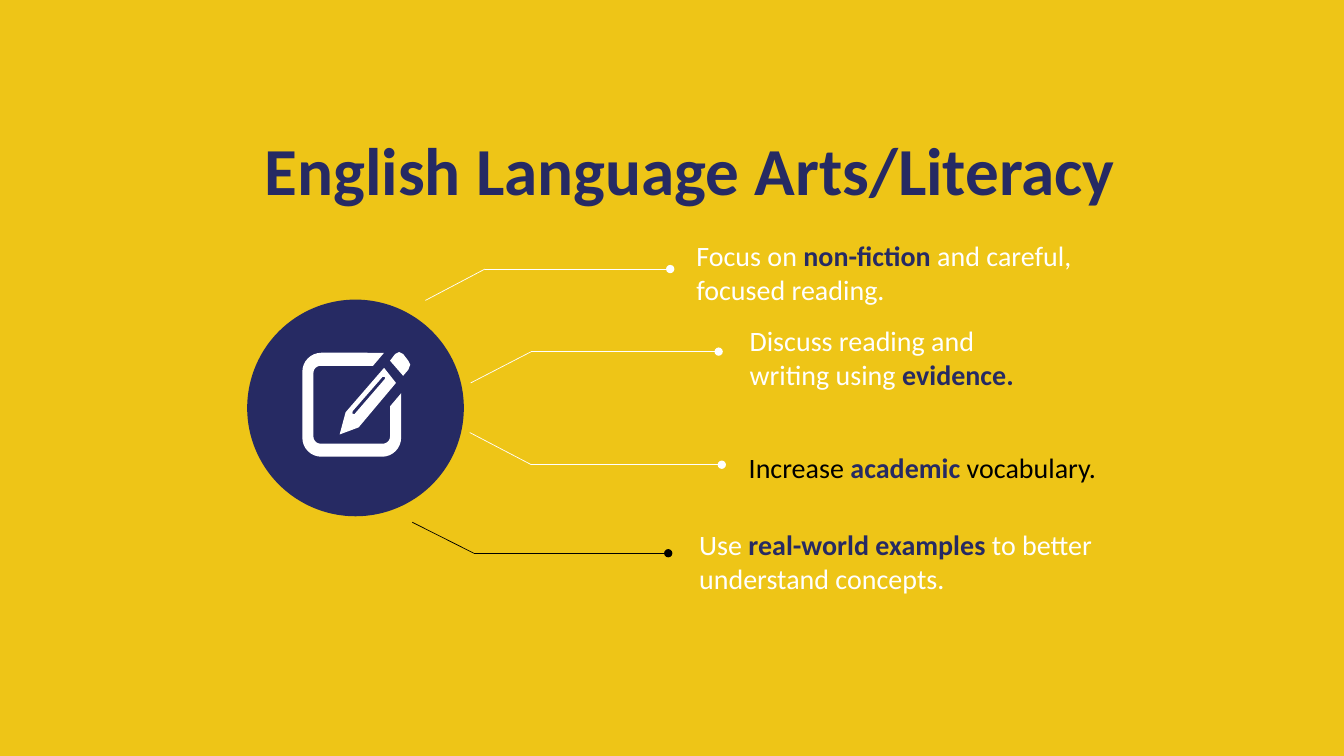
from dataclasses import dataclass
from math import cos, radians, sin

from lxml.etree import SubElement
from pptx import Presentation
from pptx.dml.color import RGBColor
from pptx.enum.shapes import MSO_CONNECTOR, MSO_SHAPE
from pptx.enum.text import MSO_AUTO_SIZE, PP_ALIGN
from pptx.oxml.ns import qn
from pptx.shapes.base import BaseShape
from pptx.slide import Slide
from pptx.text.text import TextFrame
from pptx.util import Cm, Pt

STRAIGHT = MSO_CONNECTOR.STRAIGHT
OVAL = MSO_SHAPE.OVAL
GROW = MSO_AUTO_SIZE.SHAPE_TO_FIT_TEXT
CENTER = PP_ALIGN.CENTER

Point = tuple[float, float]
Box = tuple[float, float, float, float]


@dataclass(frozen=True)
class Theme:
    gold: RGBColor = RGBColor(0xEE, 0xC5, 0x17)
    navy: RGBColor = RGBColor(0x26, 0x2A, 0x63)
    white: RGBColor = RGBColor(0xFF, 0xFF, 0xFF)
    black: RGBColor = RGBColor(0, 0, 0)
    font: str = "Calibri"
    title: Pt = Pt(48)
    body: Pt = Pt(20)
    line: Pt = Pt(0.5)


THEME = Theme()


@dataclass(frozen=True)
class Branch:
    start: Point
    bend: Point
    end: float
    color: RGBColor


@dataclass(frozen=True)
class Note:
    box: Box
    words: tuple[str, ...]  # every second piece is stressed
    color: RGBColor
    wrap: bool = True


# All places are in centimetres
BRANCHES = (
    Branch((10.72, 7.57), (12.22, 6.78), 16.89, THEME.white),
    Branch((11.86, 9.65), (13.39, 8.86), 18.11, THEME.white),
    Branch((11.84, 10.9), (13.39, 11.71), 18.19, THEME.white),
    Branch((10.39, 13.16), (11.94, 13.94), 16.84, THEME.black),
)
NOTES = (
    Note((17.3, 5.89, 11.02, 1.96),
         ("Focus on ", "non-fiction ", "and careful, focused reading."), THEME.white),
    Note((18.64, 8.03, 8.31, 1.96),
         ("Discuss reading and writing using ", "evidence."), THEME.white),
    Note((18.62, 11.23, 9.35, 1.12),
         ("Increase ", "academic ", "vocabulary."), THEME.black, wrap=False),
    Note((17.37, 13.18, 11.28, 1.96),
         ("Use ", "real-world examples ", "to better understand concepts."), THEME.white),
)


def arc(x: float, y: float, radius: float, first: int, sweep: int = 90) -> list[Point]:
    """Points of a quarter turn around (x, y)."""
    turns = [radians(first + sweep * step / 8) for step in range(9)]
    return [(x + radius * cos(turn), y + radius * sin(turn)) for turn in turns]


# Open frame, pencil, slit and rubber of the icon
FRAME = [
    (9.83, 10.24), (10.11, 9.91),
    *arc(9.63, 11.03, 0.48, 0), *arc(8.1, 11.03, 0.48, 90), *arc(8.1, 9.37, 0.48, 180),
    (9.68, 8.89), (9.4, 9.22),
    *arc(8.08, 9.4, 0.18, 270, -90), *arc(8.08, 11, 0.18, 180, -90),
    *arc(9.65, 11, 0.18, 90, -90),
]
PENCIL = [(9.98, 9.65), (9.04, 10.77), (8.56, 10.95), (8.71, 10.39), (9.68, 9.27)]
SLIT = [(9.7, 9.55), (9.7, 9.5), (9.64, 9.5), (8.89, 10.36), (8.88, 10.42), (8.93, 10.44)]
RUBBER = [(10.16, 9.47), (9.83, 9.09), (9.96, 8.92), (10.06, 8.87), (10.16, 8.92),
          (10.29, 9.09), (10.34, 9.19), (10.29, 9.32)]


def paint(shape: BaseShape, color: RGBColor) -> None:
    shape.shadow.inherit = False
    shape.fill.solid()
    shape.fill.fore_color.rgb = color
    shape.line.fill.background()


def add_icon(slide: Slide) -> None:
    disc = slide.shapes.add_shape(OVAL, Cm(6.23), Cm(7.55), Cm(5.46), Cm(5.46))
    paint(disc, THEME.navy)
    frame, *others = [[(Cm(x), Cm(y)) for x, y in loop]
                      for loop in (FRAME, PENCIL, SLIT, RUBBER)]
    pen = slide.shapes.build_freeform(*frame[0])
    pen.add_line_segments(frame[1:])
    for loop in others:
        pen.move_to(*loop[0])
        pen.add_line_segments(loop[1:])
    paint(pen.convert_to_shape(), THEME.white)


def add_branch(slide: Slide, branch: Branch) -> None:
    group = slide.shapes.add_group_shape()
    tip = (branch.end, branch.bend[1])
    for first, last in ((branch.start, branch.bend), (branch.bend, tip)):
        line = group.shapes.add_connector(STRAIGHT, *map(Cm, first + last))
        line.line.color.rgb = branch.color
        line.line.width = THEME.line
        props = line.element.spPr
        if last is tip:
            SubElement(props.find(qn("a:ln")), qn("a:tailEnd"), type="oval")
        SubElement(props, qn("a:effectLst"))


def add_text(slide: Slide, box: Box, words: tuple[str, ...], size: Pt,
             color: RGBColor, wrap: bool) -> TextFrame:
    frame = slide.shapes.add_textbox(*map(Cm, box)).text_frame
    frame.word_wrap = wrap
    frame.auto_size = GROW
    for index, piece in enumerate(words):
        run = frame.paragraphs[0].add_run()
        run.text = piece
        run.font.name = THEME.font
        run.font.size = size
        run.font.bold = index % 2 == 1
        run.font.color.rgb = THEME.navy if run.font.bold else color
    return frame


def main() -> None:
    deck = Presentation()
    deck.slide_width, deck.slide_height = Cm(33.87), Cm(19.05)
    slide = deck.slides.add_slide(deck.slide_layouts[6])
    slide.background.fill.solid()
    slide.background.fill.fore_color.rgb = THEME.gold

    # Icon with its branches
    add_icon(slide)
    for branch in BRANCHES:
        add_branch(slide, branch)

    # Notes at the branch tips
    for note in NOTES:
        add_text(slide, note.box, note.words, THEME.body, note.color, note.wrap)

    # Title
    title = add_text(slide, (6.27, 3.1, 22.25, 2.31), ("English Language Arts/Literacy",),
                     THEME.title, THEME.navy, False).paragraphs[0]
    title.alignment = CENTER
    title.runs[0].font.bold = True

    deck.save("out.pptx")


if __name__ == "__main__":
    main()
